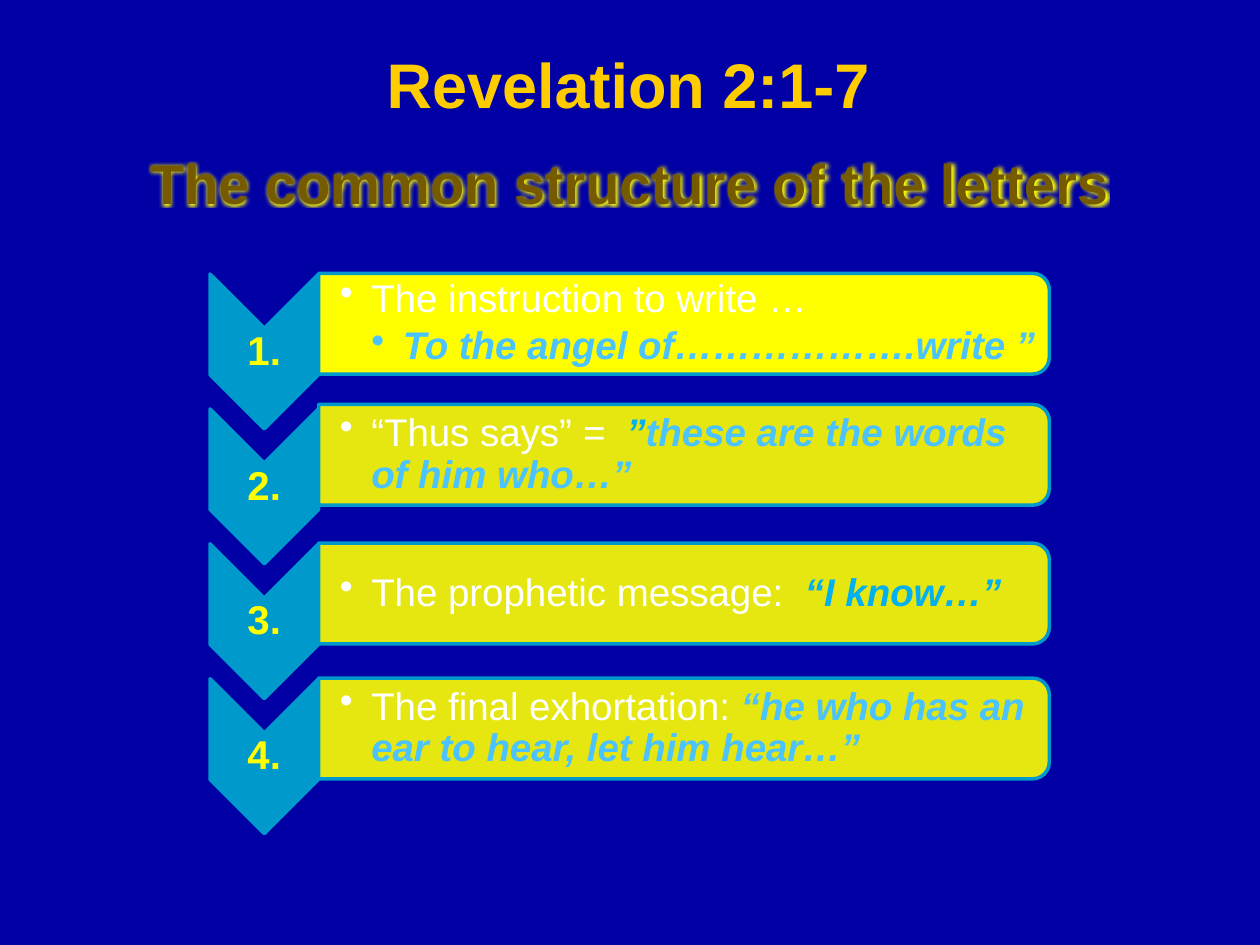
from lxml import etree
from pptx import Presentation
from pptx.dml.color import RGBColor
from pptx.enum import shapes, text
from pptx.oxml import ns
from pptx.util import Pt

NAVY = RGBColor(0x00, 0x00, 0xA4)
OUTLINE = RGBColor(0x00, 0x20, 0x60)
GOLD = RGBColor(0xFF, 0xCC, 0x00)
BROWN = RGBColor(0x76, 0x5A, 0x00)
YELLOW = RGBColor(0xFF, 0xFF, 0x00)
TEAL = RGBColor(0x00, 0x99, 0xCC)
WHITE = RGBColor(0xFF, 0xFF, 0xFF)
SKY = RGBColor(0x4A, 0xC3, 0xFF)
AZURE = RGBColor(0x00, 0xB0, 0xF0)

QUOTE = {"color": SKY, "bold": True, "italic": True}
ACCENT = {"color": AZURE, "bold": True, "italic": True}

STEPS = [
    {"lines": [[("The instruction to write …", {})],
               [("To the angel of……………….write ”", QUOTE)]], "opacity": 100},
    {"lines": [[("“Thus says” ", {}), ("=  ", {"italic": True}), ("”", ACCENT),
                ("these are the words of him who…”", QUOTE)]], "shift": -2.2},
    {"lines": [[("The prophetic message:  ", {}), ("“I know…”", ACCENT)]]},
    {"lines": [[("The final exhortation: ", {}),
                ("“he who has an ear to hear, let him hear…”", QUOTE)]]},
]


def add_element(parent, tag, **attributes):
    return etree.SubElement(parent, ns.qn(tag), {key: str(value) for key, value in attributes.items()})


def add_run(paragraph, content, size=22, color=WHITE, bold=False, italic=False):
    run = paragraph.add_run()
    run.text = content
    font = run.font
    font.name, font.size, font.bold, font.italic = "Arial", Pt(size), bold, italic
    font.color.rgb = color
    return run


def prepare_frame(shape, margins, anchor=text.MSO_ANCHOR.MIDDLE):
    frame = shape.text_frame
    frame.word_wrap = True
    frame.auto_size = text.MSO_AUTO_SIZE.NONE
    frame.vertical_anchor = anchor
    frame.margin_left, frame.margin_top, frame.margin_right, frame.margin_bottom = map(Pt, margins)
    return frame


def add_heading(shape, content, size, color, margins, anchor, glow=None):
    paragraph = prepare_frame(shape, margins, anchor).paragraphs[0]
    paragraph.alignment = text.PP_ALIGN.CENTER
    run = add_run(paragraph, content, size=size, color=color, bold=True)
    properties = run.font._element
    outline = etree.Element(ns.qn("a:ln"), w=str(Pt(0.75)))
    add_element(add_element(outline, "a:solidFill"), "a:srgbClr", val=OUTLINE)
    properties.insert(0, outline)
    if glow is not None:
        effects = etree.Element(ns.qn("a:effectLst"))
        add_element(add_element(effects, "a:glow", rad=Pt(4)), "a:srgbClr", val=glow)
        properties.find(ns.qn("a:solidFill")).addnext(effects)


def add_rotated(slide, kind, left, top, width, height, fill, opacity=100):
    shape = slide.shapes.add_shape(
        kind, Pt(left + (width - height) / 2), Pt(top + (height - width) / 2), Pt(height), Pt(width))
    shape.rotation = 90
    shape.shadow.inherit = False
    shape.fill.solid()
    shape.fill.fore_color.rgb = fill
    shape.line.color.rgb = TEAL
    shape.line.width = Pt(2)
    if opacity < 100:
        color = shape._element.spPr.find(ns.qn("a:solidFill"))[0]
        add_element(color, "a:alpha", val=opacity * 1000)


def add_bullet(paragraph, level):
    paragraph.level = level
    properties = paragraph._p.get_or_add_pPr()
    properties.set("marL", str(Pt(18 * (level + 1))))
    properties.set("indent", str(Pt(-18)))
    paragraph.line_spacing = 0.9
    paragraph.space_after = Pt(3.3)
    add_element(properties, "a:buChar", char="•")


def add_step(slide, left, top, number, lines, opacity=90, shift=0):
    add_rotated(slide, shapes.MSO_SHAPE.CHEVRON, left, top + 0.4, 62, 88.5, TEAL)
    label = slide.shapes.add_textbox(Pt(left), Pt(top + 31.7), Pt(62), Pt(26.6))
    paragraph = prepare_frame(label, (1.2,) * 4).paragraphs[0]
    paragraph.alignment = text.PP_ALIGN.CENTER
    paragraph.line_spacing = 0.9
    paragraph.space_after = Pt(8)
    add_run(paragraph, f"{number}.", size=23, color=YELLOW, bold=True)

    panel_left, panel_top = left + 62, top + shift
    add_rotated(slide, shapes.MSO_SHAPE.ROUND_2_SAME_RECTANGLE,
                panel_left, panel_top, 417.6, 57.6, YELLOW, opacity)
    body = slide.shapes.add_textbox(Pt(panel_left), Pt(panel_top + 2.9), Pt(414.7), Pt(51.8))
    frame = prepare_frame(body, (12.2, 1.2, 1.2, 1.2))
    for level, runs in enumerate(lines):
        paragraph = frame.add_paragraph() if level else frame.paragraphs[0]
        add_bullet(paragraph, level)
        for content, style in runs:
            add_run(paragraph, content, **style)


def add_headings(slide, left, top, width):
    title = slide.shapes.title
    title.left, title.top, title.width, title.height = Pt(left), Pt(top), Pt(width), Pt(59)
    add_heading(title, "Revelation 2:1-7", 36, GOLD, (7.2, 3.6, 7.2, 3.6), text.MSO_ANCHOR.MIDDLE)
    subtitle = slide.shapes.add_textbox(Pt(left), Pt(top + 59), Pt(width + 2), Pt(53.3))
    add_heading(subtitle, "The common structure of the letters", 32, BROWN,
                (7.2, 8, 7.2, 3.6), text.MSO_ANCHOR.TOP, glow=YELLOW)


def add_steps(slide, left, top, pitch):
    for index, step in enumerate(STEPS):
        add_step(slide, left, top + index * pitch, index + 1, **step)


def main():
    presentation = Presentation()
    presentation.slide_width, presentation.slide_height = Pt(720), Pt(540)
    slide = presentation.slides.add_slide(presentation.slide_layouts[5])
    slide.background.fill.solid()
    slide.background.fill.fore_color.rgb = NAVY
    add_headings(slide, 23.8, 18, 670.3)
    add_steps(slide, 120, 156.2, 77.1)
    presentation.save("out.pptx")


if __name__ == "__main__":
    main()
